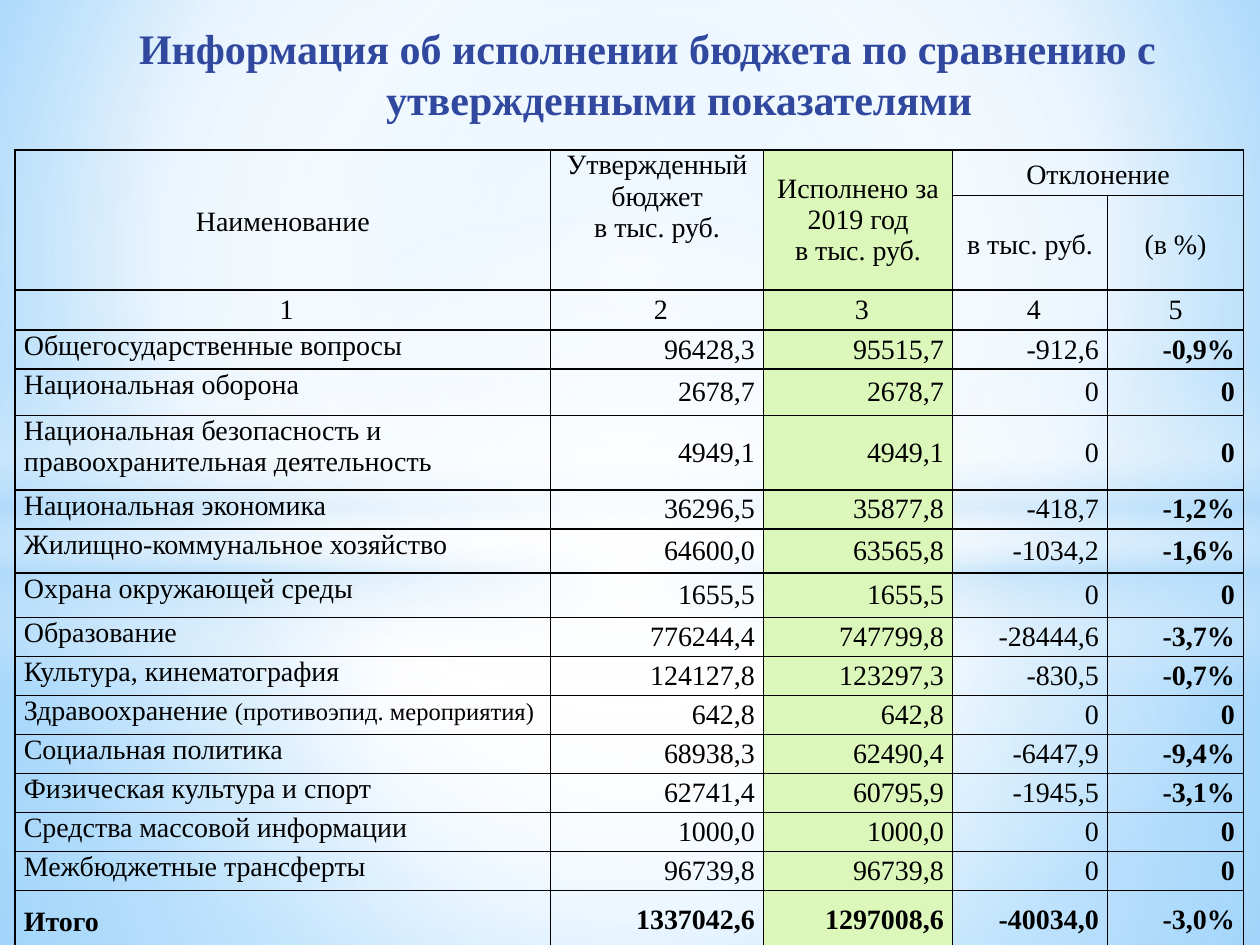
"""Build the slide comparing budget execution with the approved figures."""
from lxml import etree
from pptx import Presentation
from pptx.dml.color import RGBColor
from pptx.enum.shapes import MSO_SHAPE
from pptx.enum.text import MSO_ANCHOR, MSO_AUTO_SIZE, PP_ALIGN
from pptx.oxml.ns import qn
from pptx.util import Inches, Pt

RECTANGLE, OVAL = MSO_SHAPE.RECTANGLE, MSO_SHAPE.OVAL
TOP, MIDDLE = MSO_ANCHOR.TOP, MSO_ANCHOR.MIDDLE
LEFT, CENTER, RIGHT = PP_ALIGN.LEFT, PP_ALIGN.CENTER, PP_ALIGN.RIGHT
NO_FIT = MSO_AUTO_SIZE.NONE

BLACK = RGBColor(0x00, 0x00, 0x00)
WHITE = RGBColor(0xFF, 0xFF, 0xFF)
NAVY = RGBColor(0x31, 0x48, 0x9F)
GREEN = RGBColor(0xDC, 0xF7, 0xBA)
MIST = RGBColor(0xB4, 0xDC, 0xFA)
SKY = RGBColor(0x9E, 0xD5, 0xFF)
AZURE = RGBColor(0x5B, 0xB9, 0xFF)

MIDPOINT = (50, 50, 50, 50)
BACKDROP = [(0, SKY, 100), (60, WHITE, 100), (100, AZURE, 100)]
GLOWS = [
    (RECTANGLE, (0, 4.23, 10, 3.27), [(0, WHITE, 91), (37, WHITE, 76), (100, MIST, 79)], MIDPOINT),
    (RECTANGLE, (0, 0, 10, 4.23), [(0, WHITE, 89), (48, WHITE, 62), (100, MIST, 79)], MIDPOINT),
    (RECTANGLE, (0, 2.9, 10, 2.5), [(0, WHITE, 0), (29, WHITE, 30), (45, MIST, 40),
                                   (55, WHITE, 26), (65, MIST, 60), (100, WHITE, 0)], None),
    (OVAL, (0, 1.75, 10, 5.58), [(0, WHITE, 100), (54, WHITE, 0)], MIDPOINT),
]

TITLE = "Информация об исполнении бюджета по сравнению с утвержденными показателями"
COLUMNS = [4.25, 1.69, 1.5, 1.23, 1.08]
HEADER_HEIGHTS = [0.36, 0.75, 0.32]
DONE_COLUMN = 2
HEADERS = [
    (0, 0, 1, 0, "Наименование", 1.15, MIDDLE),
    (0, 1, 1, 1, "Утвержденный бюджет\nв тыс. руб.", 1.0, TOP),
    (0, 2, 1, 2, "Исполнено за 2019 год\nв тыс. руб.", 1.0, MIDDLE),
    (0, 3, 0, 4, "Отклонение", 1.15, MIDDLE),
    (1, 3, 1, 3, "в тыс. руб.", 1.15, MIDDLE),
    (1, 4, 1, 4, "(в %)", 1.15, MIDDLE),
]
BUDGET = [
    (0.31, "Общегосударственные вопросы", "96428,3", "95515,7", "-912,6", "-0,9%"),
    (0.37, "Национальная оборона", "2678,7", "2678,7", "0", "0"),
    (0.59, "Национальная безопасность и правоохранительная деятельность",
     "4949,1", "4949,1", "0", "0"),
    (0.31, "Национальная экономика", "36296,5", "35877,8", "-418,7", "-1,2%"),
    (0.35, "Жилищно-коммунальное хозяйство", "64600,0", "63565,8", "-1034,2", "-1,6%"),
    (0.35, "Охрана окружающей среды", "1655,5", "1655,5", "0", "0"),
    (0.31, "Образование", "776244,4", "747799,8", "-28444,6", "-3,7%"),
    (0.31, "Культура, кинематография", "124127,8", "123297,3", "-830,5", "-0,7%"),
    (0.31, "Здравоохранение (противоэпид. мероприятия)", "642,8", "642,8", "0", "0"),
    (0.31, "Социальная политика", "68938,3", "62490,4", "-6447,9", "-9,4%"),
    (0.31, "Физическая культура и спорт", "62741,4", "60795,9", "-1945,5", "-3,1%"),
    (0.31, "Средства массовой информации", "1000,0", "1000,0", "0", "0"),
    (0.31, "Межбюджетные трансферты", "96739,8", "96739,8", "0", "0"),
    (0.47, "Итого", "1337042,6", "1297008,6", "-40034,0", "-3,0%"),
]


def apply(target, values):
    """Set each attribute in values on the target."""
    for name, value in values.items():
        setattr(target, name, value)


def child(parent, tag, **attributes):
    """Add a drawing element with the given attributes."""
    return etree.SubElement(parent, qn(tag), {key: str(value) for key, value in attributes.items()})


class SlideBuilder:
    """Hold the text style and the current slide."""

    font = {"name": "Times New Roman", "size": Pt(16), "bold": False}
    margins = {"margin_left": Inches(0.07), "margin_right": Inches(0.07),
               "margin_top": 0, "margin_bottom": 0}

    def __init__(self, page):
        """Start on the given slide."""
        self.page = page

    def gradient(self, holder, stops, center):
        """Replace the solid fill in the holder by a radial or vertical gradient."""
        solid = holder.find(".//" + qn("a:solidFill"))
        gradient = etree.Element(qn("a:gradFill"), rotWithShape="1")
        stop_list = child(gradient, "a:gsLst")
        for position, color, opacity in stops:
            stop = child(stop_list, "a:gs", pos=position * 1000)
            child(child(stop, "a:srgbClr", val=color), "a:alpha", val=opacity * 1000)
        if center:
            sides = {side: share * 1000 for side, share in zip("ltrb", center)}
            child(child(gradient, "a:path", path="circle"), "a:fillToRect", **sides)
        else:
            child(gradient, "a:lin", ang=5400000, scaled=0)
        solid.getparent().replace(solid, gradient)

    def backdrop(self, stops, center):
        """Fill the slide background."""
        self.page.background.fill.solid()
        self.gradient(self.page.element, stops, center)

    def glow(self, kind, place, stops, center):
        """Add a borderless shape with a soft gradient."""
        shape = self.page.shapes.add_shape(kind, *map(Inches, place))
        shape.shadow.inherit = False
        shape.line.fill.background()
        shape.fill.solid()
        self.gradient(shape.element, stops, center)

    def span(self, para, text, color=BLACK, indent=None, **font):
        """Add one formatted run and optionally indent its paragraph."""
        span = para.add_run()
        span.text = text
        apply(span.font, {**self.font, **font})
        span.font.color.rgb = color
        if indent:
            properties = para._p.get_or_add_pPr()
            for name, length in zip(("marL", "indent"), indent):
                properties.set(name, str(Inches(length)))

    def title(self, text, place):
        """Place and format the slide title above the backdrop."""
        box = self.page.shapes.title
        apply(box, dict(zip(("left", "top", "width", "height"), map(Inches, place))))
        apply(box.text_frame, {"word_wrap": True, "auto_size": NO_FIT, "vertical_anchor": TOP})
        para = box.text_frame.paragraphs[0]
        para.alignment = CENTER
        self.span(para, text, NAVY, (0.7, -0.5), size=Pt(24), bold=True)
        self.page.shapes._spTree.append(box.element)

    def table(self, place, columns, rows):
        """Add a plain table with black borders and one green column."""
        frame = self.page.shapes.add_table(len(rows), len(columns), *map(Inches, place))
        table = frame.table
        apply(table, {"first_row": False, "horz_banding": False})
        for column, width in zip(table.columns, columns):
            column.width = Inches(width)
        for row, height in zip(table.rows, rows):
            row.height = Inches(height)
            for index, cell in enumerate(row.cells):
                apply(cell, self.margins)
                self.borders(cell)
                if index == DONE_COLUMN:
                    cell.fill.solid()
                    cell.fill.fore_color.rgb = GREEN
                else:
                    cell.fill.background()
        return table

    def borders(self, cell):
        """Draw all four sides of a cell."""
        properties = cell._tc.get_or_add_tcPr()
        for side in "LRTB":
            line = child(properties, "a:ln" + side, w=Pt(1))
            child(child(line, "a:solidFill"), "a:srgbClr", val=BLACK)

    def cell(self, cell, text, align, anchor=MIDDLE, spacing=1.0, indent=None, **font):
        """Fill a cell, with one paragraph per line and small print in brackets."""
        cell.vertical_anchor = anchor
        for number, line in enumerate(text.split("\n")):
            frame = cell.text_frame
            para = frame.add_paragraph() if number else frame.paragraphs[0]
            apply(para, {"alignment": align, "line_spacing": spacing})
            main, bracket, note = line.partition(" (")
            self.span(para, main + " " if note else main, indent=indent, **font)
            if note:
                self.span(para, bracket.strip() + note, size=Pt(14))


def main():
    """Compose the slide and save it."""
    deck = Presentation()
    apply(deck, {"slide_width": Inches(10), "slide_height": Inches(7.5)})
    builder = SlideBuilder(deck.slides.add_slide(deck.slide_layouts[5]))
    builder.backdrop(BACKDROP, (20, 10, 20, 60))
    for glow in GLOWS:
        builder.glow(*glow)
    builder.title(TITLE, (0.51, 0.13, 9.06, 0.85))

    heights = HEADER_HEIGHTS + [record[0] for record in BUDGET]
    table = builder.table((0.12, 1.19, sum(COLUMNS), sum(heights)), COLUMNS, heights)
    for top, left, bottom, right, text, spacing, anchor in HEADERS:
        if (top, left) != (bottom, right):
            table.cell(top, left).merge(table.cell(bottom, right))
        builder.cell(table.cell(top, left), text, CENTER, anchor, spacing)
    last = len(COLUMNS) - 1
    for column in range(len(COLUMNS)):
        indent = (0, 0.06) if column < last else None
        builder.cell(table.cell(2, column), str(column + 1), CENTER, TOP, 1.15, indent)
    for row, (_, name, *figures) in enumerate(BUDGET, len(HEADER_HEIGHTS)):
        total = row == len(heights) - 1
        builder.cell(table.cell(row, 0), name, LEFT, TOP, 1.5 if total else 1.0, bold=total)
        for column, figure in enumerate(figures, 1):
            builder.cell(table.cell(row, column), figure, RIGHT, bold=total or column == last)
    deck.save("out.pptx")


if __name__ == "__main__":
    main()
